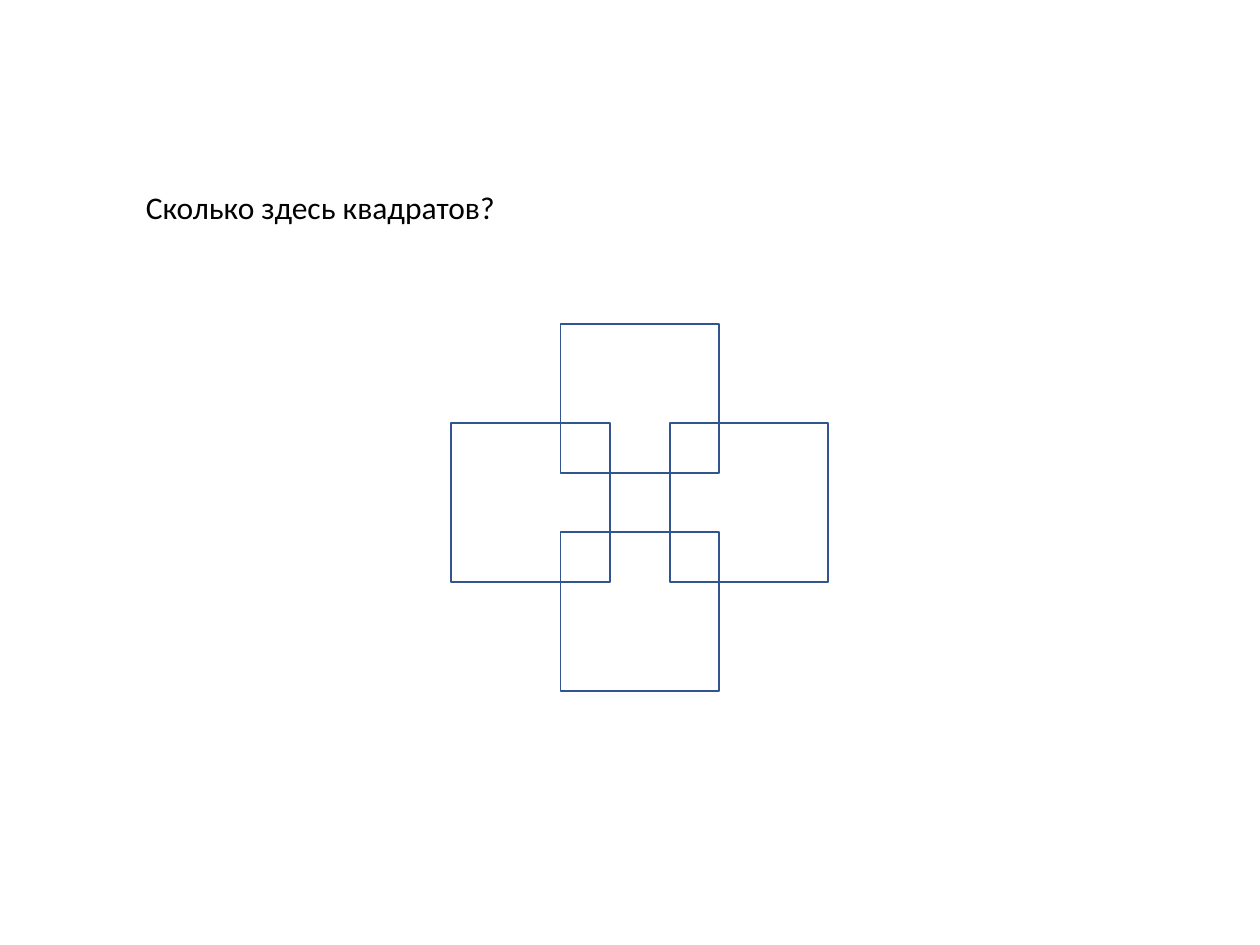
from pptx import Presentation
from pptx.dml.color import RGBColor
from pptx.enum.shapes import MSO_SHAPE
from pptx.enum.text import MSO_ANCHOR
from pptx.util import Cm, Pt

BLACK = RGBColor(0x00, 0x00, 0x00)
BLUE = RGBColor(0x32, 0x54, 0x91)

SIDE = 3.2
TOP_HEIGHT = 3.0
CENTER_LEFT = 11.3
MIDDLE_TOP = 8.53
SIDE_SHIFT = 2.2


class PuzzleSlide:
    font_name = "Calibri"
    font_size = Pt(18)
    line_width = Pt(1)

    def __init__(self, presentation):
        self.slide = presentation.slides.add_slide(presentation.slide_layouts[6])

    def question(self, text, left, top, width, height):
        shape = self.slide.shapes.add_textbox(Cm(left), Cm(top), Cm(width), Cm(height))
        frame = shape.text_frame
        frame.word_wrap = True
        frame.vertical_anchor = MSO_ANCHOR.BOTTOM
        paragraph = frame.paragraphs[0]
        paragraph.text = text
        paragraph.line_spacing = 0.9
        paragraph.font.name = self.font_name
        paragraph.font.size = self.font_size
        paragraph.font.color.rgb = BLACK

    def outline(self, left, top, width=SIDE, height=SIDE):
        shape = self.slide.shapes.add_shape(
            MSO_SHAPE.RECTANGLE, Cm(left), Cm(top), Cm(width), Cm(height)
        )
        shape.shadow.inherit = False
        shape.fill.background()
        shape.line.color.rgb = BLUE
        shape.line.width = self.line_width


def main():
    presentation = Presentation()
    presentation.slide_width = Cm(25.4)
    presentation.slide_height = Cm(19.05)
    puzzle = PuzzleSlide(presentation)
    puzzle.question("Сколько здесь квадратов?", 2.69, 0.91, 21.59, 3.78)
    puzzle.outline(CENTER_LEFT, MIDDLE_TOP - 2, height=TOP_HEIGHT)
    puzzle.outline(CENTER_LEFT, MIDDLE_TOP + SIDE_SHIFT)
    for direction in (1, -1):
        puzzle.outline(CENTER_LEFT + direction * SIDE_SHIFT, MIDDLE_TOP)
    presentation.save("out.pptx")


if __name__ == "__main__":
    main()
